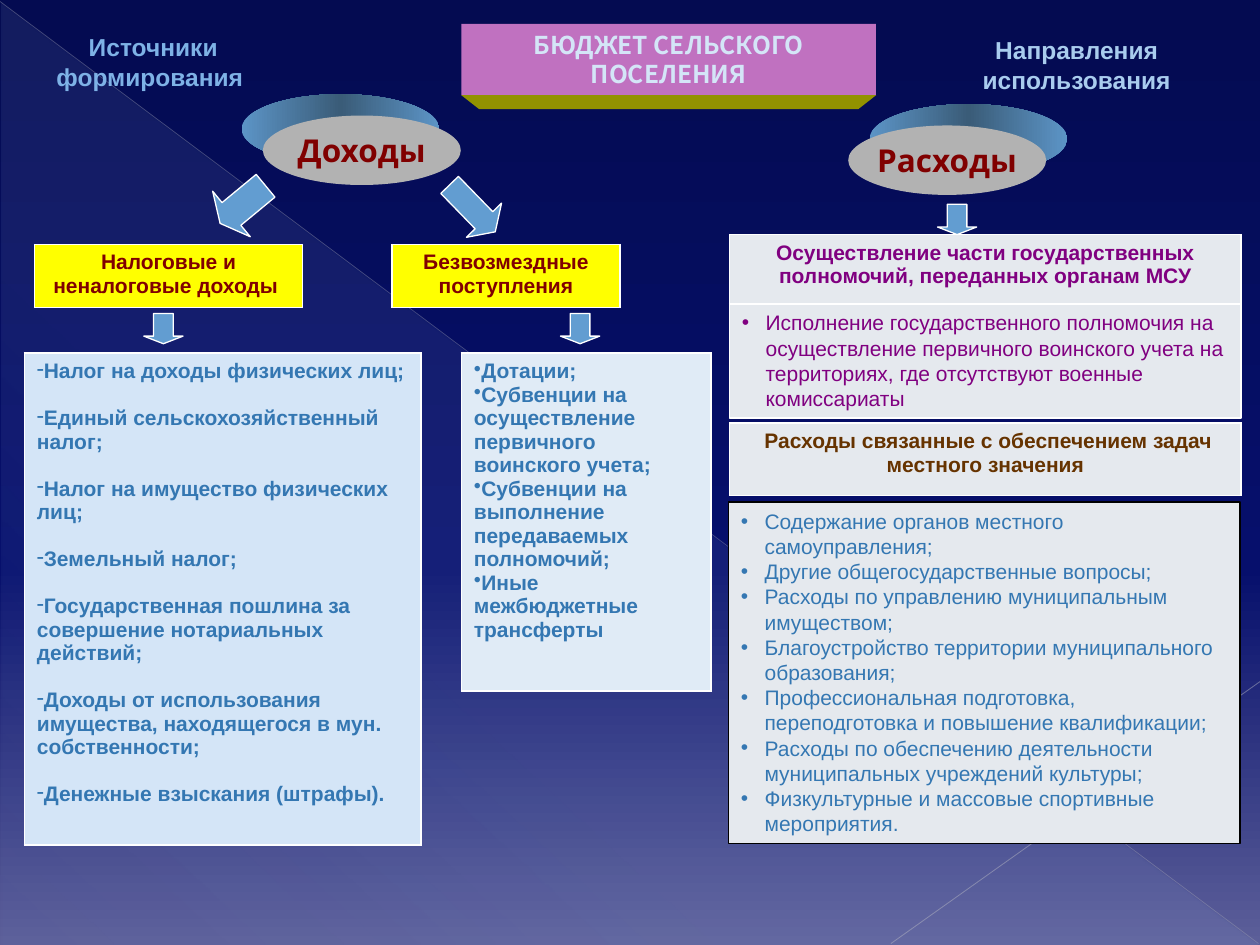
import pptx
import pptx.dml.color
import pptx.enum.shapes
import pptx.enum.text
import pptx.oxml.ns
import pptx.util
from lxml import etree

Cm, Pt = pptx.util.Cm, pptx.util.Pt
RGB = pptx.dml.color.RGBColor.from_string
qn = pptx.oxml.ns.qn
SHAPE = pptx.enum.shapes.MSO_SHAPE
ALIGN = pptx.enum.text.PP_ALIGN
ANCHOR = pptx.enum.text.MSO_ANCHOR


class Theme:
    # Colours; gradient stops are (position, colour, opacity)
    sky = [(0, "040B51", 100), (60, "060F6C", 100), (100, "5C5F99", 100)]
    veil = [(0, "ACCBF9", 10), (70, "ACCBF9", 8), (100, "ACCBF9", 1)]
    depth = [(0, "5C94C6", 100), (50, "3A5C78", 100), (100, "5C94C6", 100)]
    white, black = "FFFFFF", "000000"
    banner, banner_edge, banner_text = "C071C0", "929200", "D4E5F7"
    oval, arrow, yellow = "B2B2B2", "629DD1", "FFFF00"
    tax, grant, spending = "D4E5F7", "E0EBF6", "E5E9EE"
    maroon, purple, brown, blue = "800000", "800080", "663300", "3477B2"
    sources, uses = "7EB2E6", "A9CCEE"
    # Type, in points
    body, heading, label = 12, 14, 18
    tax_gap, list_pitch = 13.4, 14.4
    font, title_font, label_font = "Arial", "Noto Sans CJK KR", "Quicksand"


def write(tf, texts, size=Theme.body, color=Theme.blue, font=Theme.font, bold=True,
          align=ALIGN.LEFT, bullet=None, hang=0, pitch=None, after=0, anchor=ANCHOR.TOP, wrap=True):
    tf.auto_size = pptx.enum.text.MSO_AUTO_SIZE.NONE
    tf.word_wrap, tf.vertical_anchor = wrap, anchor
    for i, text in enumerate(texts):
        p = tf.add_paragraph() if i else tf.paragraphs[0]
        p.alignment, p.space_before, p.space_after = align, Pt(0), Pt(after)
        if pitch:
            p.line_spacing = Pt(pitch)
        r = p.add_run()
        r.text = text
        r.font.size, r.font.name, r.font.bold = Pt(size), font, bold
        r.font.color.rgb = RGB(color)
        if bullet:
            pPr = p._p.get_or_add_pPr()
            pPr.set("marL", str(Cm(hang)))
            pPr.set("indent", str(-Cm(hang)))
            etree.SubElement(pPr, qn("a:buChar"), char=bullet)


def paint(obj, fill, line=None, angle=0):
    if isinstance(fill, list):
        obj.fill.gradient()
        obj.fill.gradient_angle = angle
        stops = obj.element.xpath(".//a:gsLst")[0]
        for old in list(stops):
            stops.remove(old)
        for pos, color, opacity in fill:
            gs = etree.SubElement(stops, qn("a:gs"), pos=str(pos * 1000))
            clr = etree.SubElement(gs, qn("a:srgbClr"), val=color)
            etree.SubElement(clr, qn("a:alpha"), val=str(opacity * 1000))
    else:
        obj.fill.solid()
        obj.fill.fore_color.rgb = RGB(fill)
    if hasattr(obj, "line"):
        obj.shadow.inherit = False
        if line:
            obj.line.color.rgb, obj.line.width = RGB(line), Pt(0.75)
        else:
            obj.line.fill.background()


prs = pptx.Presentation()
prs.slide_width, prs.slide_height = Cm(25.4), Cm(19.05)
s = prs.slides.add_slide(prs.slide_layouts[3])

# Background: gradient, veil and thin diagonals, kept behind the placeholders
paint(s.background, Theme.sky, angle=270)
veil = s.shapes.add_shape(SHAPE.RIGHT_TRIANGLE, Cm(0.03), Cm(0.05), Cm(25.35), Cm(19))
paint(veil, Theme.veil, angle=227)
backdrop = [veil]
for x1, y1, x2, y2, color, width, opacity in [
    (0, 0.03, 25.37, 19.02, "B2B3BE", 0.39, 35),
    (25.4, 13.74, 17.96, 19.02, "BBBCC5", 0.47, 45),
]:
    line = s.shapes.add_connector(pptx.enum.shapes.MSO_CONNECTOR.STRAIGHT,
                                  Cm(x1), Cm(y1), Cm(x2), Cm(y2))
    line.line.color.rgb, line.line.width = RGB(color), Pt(width)
    clr = line.element.xpath(".//a:ln//a:srgbClr")[0]
    etree.SubElement(clr, qn("a:alpha"), val=str(opacity * 1000))
    etree.SubElement(line.element.spPr, qn("a:effectLst"))
    backdrop.append(line)
for i, sp in enumerate(backdrop):
    sp.element.getparent().insert(2 + i, sp.element)

# Title banner with its lower edge
x, y, w, h = 9.3, 0.48, 8.36, 1.44
title = s.shapes.title
title.left, title.top, title.width, title.height = Cm(x), Cm(y), Cm(w), Cm(h)
paint(title, Theme.banner)
write(title.text_frame, ["БЮДЖЕТ СЕЛЬСКОГО ПОСЕЛЕНИЯ"], size=Theme.heading, color=Theme.banner_text,
      font=Theme.title_font, align=ALIGN.CENTER, pitch=16.6, anchor=ANCHOR.MIDDLE)
edge = s.shapes.add_shape(SHAPE.TRAPEZOID, Cm(x), Cm(y + h), Cm(w), Cm(0.28))
edge.rotation = 180
edge.adjustments[0] = 1.28
paint(edge, Theme.banner_edge)

# Side headings
for x, y, w, text, color in [
    (0.51, 0.51, 5.16, "Источники формирования ", Theme.sources),
    (18.9, 0.58, 5.61, "Направления использования", Theme.uses),
]:
    sp = s.shapes.add_textbox(Cm(x), Cm(y), Cm(w), Cm(1.45))
    write(sp.text_frame, [text], size=Theme.heading, color=color, align=ALIGN.CENTER, pitch=17)

# Ovals, each with a shifted back for depth
for x, y, shift, text in [(5.3, 2.33, -0.43, "Доходы"), (17.1, 2.53, 0.43, "Расходы")]:
    w, h, rise = 3.99, 1.4, -0.43
    back = s.shapes.add_shape(SHAPE.OVAL, Cm(x + shift), Cm(y + rise), Cm(w), Cm(h))
    paint(back, Theme.depth)
    sp = s.shapes.add_shape(SHAPE.OVAL, Cm(x), Cm(y), Cm(w), Cm(h))
    paint(sp, Theme.oval)
    write(sp.text_frame, [text], size=Theme.label, color=Theme.maroon, font=Theme.label_font,
          align=ALIGN.CENTER, anchor=ANCHOR.MIDDLE, wrap=False)

# One-cell tables with white borders
centred = {"align": ALIGN.CENTER}
taxes = ["Налог на доходы физических лиц;", "Единый сельскохозяйственный налог;",
         "Налог на имущество физических лиц;", "Земельный налог;",
         "Государственная пошлина за совершение нотариальных действий;",
         "Доходы от использования имущества, находящегося в мун. собственности;",
         "Денежные взыскания (штрафы)."]
grants = ["Дотации;", "Субвенции на осуществление первичного воинского учета;",
          "Субвенции на выполнение передаваемых полномочий;", "Иные межбюджетные трансферты"]
for x, y, w, h, fill, texts, style in [
    (0.7, 4.93, 5.4, 1.27, Theme.yellow, ["Налоговые и неналоговые доходы "],
     {"color": Theme.maroon, **centred}),
    (7.9, 4.93, 4.6, 1.27, Theme.yellow, ["Безвозмездные поступления"],
     {"color": Theme.maroon, **centred}),
    (0.49, 7.12, 8, 9.91, Theme.tax, taxes, {"bullet": "-", "after": Theme.tax_gap}),
    (9.3, 7.12, 5.03, 6.81, Theme.grant, grants, {"bullet": "•"}),
    (14.71, 4.73, 10.31, 1.4, Theme.spending,
     ["Осуществление части государственных полномочий, переданных органам МСУ"],
     {"color": Theme.purple, **centred}),
    (14.71, 8.53, 10.31, 1.46, Theme.spending,
     [" Расходы связанные с обеспечением задач местного значения"],
     {"color": Theme.brown, **centred}),
]:
    table = s.shapes.add_table(1, 1, Cm(x), Cm(y), Cm(w), Cm(h)).table
    table.first_row = table.horz_banding = False
    cell = table.cell(0, 0)
    write(cell.text_frame, texts, **style)
    tcPr = cell._tc.get_or_add_tcPr()
    for side in ("a:lnL", "a:lnR", "a:lnT", "a:lnB"):
        ln = etree.SubElement(tcPr, qn(side), w=str(Pt(1)))
        etree.SubElement(etree.SubElement(ln, qn("a:solidFill")), qn("a:srgbClr"), val=Theme.white)
    cell.fill.solid()
    cell.fill.fore_color.rgb = RGB(fill)

# Spending lists
state = ["Исполнение государственного полномочия на осуществление первичного воинского учета "
         "на территориях, где отсутствуют военные комиссариаты"]
local = ["Содержание органов местного самоуправления;", "Другие общегосударственные вопросы;",
         "Расходы по управлению муниципальным имуществом;",
         "Благоустройство территории муниципального образования;",
         "Профессиональная подготовка, переподготовка и повышение квалификации;",
         "Расходы по обеспечению деятельности муниципальных учреждений культуры;",
         "Физкультурные и массовые спортивные мероприятия."]
for idx, x, y, h, border, color, texts in [
    (1, 14.7, 6.12, 2.31, Theme.white, Theme.purple, state),
    (2, 14.68, 10.12, 6.88, Theme.black, Theme.blue, local),
]:
    sp = s.placeholders[idx]
    sp.left, sp.top, sp.width, sp.height = Cm(x), Cm(y), Cm(10.32), Cm(h)
    paint(sp, Theme.spending, border)
    write(sp.text_frame, texts, color=color, bold=False, bullet="•", hang=0.48,
          pitch=Theme.list_pitch)

# Arrows
for x, y, w, h, turn, head in [
    (4.3, 3.53, 1.19, 1.19, 50.4, 0.25),
    (9.03, 3.54, 0.99, 1.32, 315.8, 0.33),
    (11.3, 6.32, 0.79, 0.61, 0, 0.25),
    (2.9, 6.32, 0.79, 0.61, 0, 0.25),
    (18.9, 4.12, 0.79, 0.61, 0, 0.25),
]:
    sp = s.shapes.add_shape(SHAPE.DOWN_ARROW, Cm(x), Cm(y), Cm(w), Cm(h))
    sp.rotation = turn
    sp.adjustments[0], sp.adjustments[1] = 0.5, head
    paint(sp, Theme.arrow, Theme.white)

prs.save("out.pptx")
